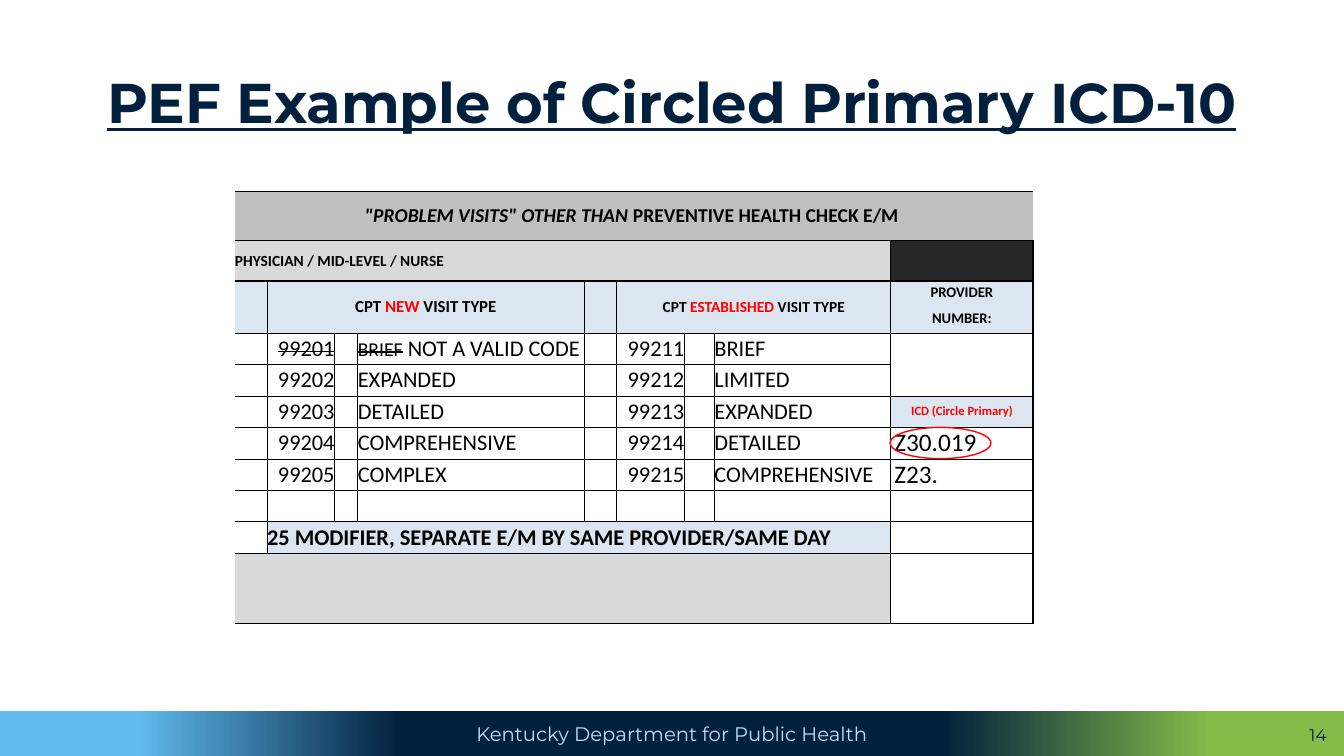
from dataclasses import dataclass

from lxml.etree import SubElement
from pptx import Presentation
from pptx.dml.color import RGBColor
from pptx.enum.shapes import MSO_SHAPE
from pptx.enum.text import MSO_ANCHOR, PP_ALIGN
from pptx.oxml.ns import qn
from pptx.util import Pt

RECTANGLE, OVAL = MSO_SHAPE.RECTANGLE, MSO_SHAPE.OVAL
MIDDLE = MSO_ANCHOR.MIDDLE
LEFT, CENTER, RIGHT = PP_ALIGN.LEFT, PP_ALIGN.CENTER, PP_ALIGN.RIGHT


@dataclass(frozen=True)
class Theme:
    heading_font: str = "Montserrat"
    table_font: str = "Calibri"
    navy: str = "01203D"
    sky: str = "62BCF0"
    green: str = "84BC49"
    pale_blue: str = "BCDEFB"
    black: str = "000000"
    red: str = "FF0000"
    banner: str = "BFBFBF"
    gray: str = "D9D9D9"
    dark: str = "262626"
    tint: str = "DCE6F1"
    title: float = 40
    footer: float = 14
    number: float = 12
    icd: float = 18
    code: float = 16
    banner_text: float = 14
    new_visit: float = 12
    label: float = 11
    provider: float = 10.5
    hint: float = 9
    empty: float = 8


THEME = Theme()
COLUMN_WIDTHS = [23, 48.2, 16.6, 162, 23, 48.2, 21.6, 126, 101.5]
ROW_HEIGHTS = [35.2, 28.9, 16.8, 20.4] + [22.5] * 7 + [50]
COLUMN_EDGES = [0, 0.5, 0.5, 0.5, 1, 0.5, 0.5, 0.5, 1, 1]
ROW_EDGES = [1, 0.5, 1] + [0.5] * 7 + [1, 1, 1]
NEW_VISITS = ["", "EXPANDED", "DETAILED", "COMPREHENSIVE", "COMPLEX"]
ESTABLISHED_VISITS = ["BRIEF", "LIMITED", "EXPANDED", "DETAILED", "COMPREHENSIVE"]


def add_span(para, text, *, size, font=THEME.table_font, color=THEME.black,
             bold=False, italic=False, underline=False, strike=False):
    span = para.add_run()
    span.text = text
    span.font.name = font
    span.font.size = Pt(size)
    span.font.color.rgb = RGBColor.from_string(color)
    span.font.bold, span.font.italic, span.font.underline = bold, italic, underline
    if strike:
        span.font._element.set("strike", "sngStrike")


class SlideBuilder:
    def __init__(self, page, theme):
        self.page = page
        self.theme = theme

    def shape(self, kind, *bounds):
        box = self.page.shapes.add_shape(kind, *map(Pt, bounds))
        box.shadow.inherit = False
        return box

    def fill_frame(self, frame, text, align, **style):
        frame.word_wrap = True
        frame.vertical_anchor = MIDDLE
        para = frame.paragraphs[0]
        para.alignment = align
        add_span(para, text, **style)
        return para

    def text(self, bounds, text, align, **style):
        box = self.page.shapes.add_textbox(*map(Pt, bounds))
        return self.fill_frame(box.text_frame, text, align, **style)

    def gradient_bar(self, bounds, stops, text, **style):
        bar = self.shape(RECTANGLE, *bounds)
        bar.line.fill.background()
        bar.fill.gradient()
        bar.fill.gradient_angle = 0
        stop_list = bar._element.spPr.find(qn("a:gradFill")).find(qn("a:gsLst"))
        stop_list.clear()
        for percent, color in stops:
            stop = SubElement(stop_list, qn("a:gs"), pos=str(percent * 1000))
            SubElement(stop, qn("a:srgbClr"), val=color)
        self.fill_frame(bar.text_frame, text, CENTER, **style)

    def ring(self, *bounds):
        ring = self.shape(OVAL, *bounds)
        ring.fill.background()
        ring.line.color.rgb = RGBColor.from_string(self.theme.red)
        ring.line.width = Pt(1)

    def table(self, left, top):
        frame = self.page.shapes.add_table(
            len(ROW_HEIGHTS), len(COLUMN_WIDTHS), Pt(left), Pt(top),
            Pt(sum(COLUMN_WIDTHS)), Pt(sum(ROW_HEIGHTS)))
        grid = frame.table
        grid.first_row = grid.horz_banding = False
        for column, width in zip(grid.columns, COLUMN_WIDTHS):
            column.width = Pt(width)
        for row, height in zip(grid.rows, ROW_HEIGHTS):
            row.height = Pt(height)
        return grid

    def border(self, cell, side, weight):
        line = SubElement(cell._tc.get_or_add_tcPr(), qn(f"a:ln{side}"), w=str(Pt(weight)))
        if weight:
            paint = SubElement(line, qn("a:solidFill"))
            SubElement(paint, qn("a:srgbClr"), val=self.theme.black)
        else:
            SubElement(line, qn("a:noFill"))

    def cell(self, grid, row, column, spans=(), fill=None, align=LEFT,
             rows=1, columns=1, indent=0, hidden=""):
        last_row, last_column = row + rows - 1, column + columns - 1
        for r in range(row, last_row + 1):
            for c in range(column, last_column + 1):
                part = grid.cell(r, c)
                weights = {
                    "L": COLUMN_EDGES[c] if c == column else 0,
                    "R": COLUMN_EDGES[c + 1] if c == last_column else 0,
                    "T": ROW_EDGES[r] if r == row else 0,
                    "B": ROW_EDGES[r + 1] if r == last_row else 0,
                }
                for side, weight in weights.items():
                    self.border(part, side, 0 if side in hidden else weight)
                if fill:
                    part.fill.solid()
                    part.fill.fore_color.rgb = RGBColor.from_string(fill)
                else:
                    part.fill.background()
                part.margin_left = Pt(indent)
                part.margin_right = part.margin_top = part.margin_bottom = 0
                part.vertical_anchor = MIDDLE
                if (r, c) != (row, column) or not spans:
                    SubElement(part.text_frame.paragraphs[0]._p, qn("a:endParaRPr"),
                               sz=str(int(self.theme.empty * 100)))
        origin = grid.cell(row, column)
        if rows * columns > 1:
            origin.merge(grid.cell(last_row, last_column))
        para = origin.text_frame.paragraphs[0]
        para.alignment = align
        for text, style in spans:
            add_span(para, text, **style)


def fill_headers(builder, grid):
    theme = builder.theme
    banner = dict(size=theme.banner_text, bold=True)
    builder.cell(grid, 0, 0, [('"PROBLEM VISITS" OTHER THAN ', dict(banner, italic=True)),
                              ("PREVENTIVE HEALTH CHECK E/M ", banner)],
                 theme.banner, CENTER, columns=9)
    builder.cell(grid, 1, 0, [("PHYSICIAN / MID-LEVEL / NURSE", dict(size=theme.label, bold=True))],
                 theme.gray, columns=8)
    builder.cell(grid, 1, 8, fill=theme.dark)
    for column, kind, size in [(0, "NEW", theme.new_visit), (4, "ESTABLISHED", theme.label)]:
        style = dict(size=size, bold=True)
        builder.cell(grid, 2, column, fill=theme.tint, rows=2)
        builder.cell(grid, 2, column + 1,
                     [("CPT ", style), (kind, dict(style, color=theme.red)), (" VISIT TYPE", style)],
                     theme.tint, CENTER, rows=2, columns=3)
    for row, word, hidden in [(2, "PROVIDER", "B"), (3, "NUMBER:", "T")]:
        builder.cell(grid, row, 8, [(word, dict(size=theme.provider, bold=True))],
                     theme.tint, CENTER, hidden=hidden)


def fill_visits(builder, grid):
    theme = builder.theme
    style = dict(size=theme.code)
    for start, first_code, visits in [(0, 99201, NEW_VISITS), (4, 99211, ESTABLISHED_VISITS)]:
        for index, visit in enumerate(visits):
            row = 4 + index
            code_style = dict(style, strike=not visit)
            spans = [(visit, style)] if visit else [
                ("BRIEF", dict(size=theme.banner_text, strike=True)), (" NOT A VALID CODE", style)]
            builder.cell(grid, row, start)
            builder.cell(grid, row, start + 1, [(str(first_code + index), code_style)], align=RIGHT)
            builder.cell(grid, row, start + 2)
            builder.cell(grid, row, start + 3, spans)
    for column in range(8):
        builder.cell(grid, 9, column)
        builder.cell(grid, 11, column, fill=theme.gray, hidden="LR" if column < 7 else "L")
    builder.cell(grid, 10, 0)
    builder.cell(grid, 10, 1, [("25 MODIFIER, SEPARATE E/M BY SAME PROVIDER/SAME DAY",
                                dict(style, bold=True))], theme.tint, columns=7)


def fill_diagnoses(builder, grid):
    theme = builder.theme
    builder.cell(grid, 4, 8, rows=2)
    builder.cell(grid, 6, 8, [("ICD (Circle Primary)", dict(size=theme.hint, color=theme.red, bold=True))],
                 theme.tint, CENTER)
    for row, code in [(7, "Z30.019"), (8, "Z23.")]:
        builder.cell(grid, row, 8, [(code, dict(size=theme.icd))], indent=2.5)
    for row in range(9, 12):
        builder.cell(grid, row, 8)


def main():
    deck = Presentation()
    deck.slide_width, deck.slide_height = Pt(960), Pt(540)
    builder = SlideBuilder(deck.slides.add_slide(deck.slide_layouts[6]), THEME)
    builder.gradient_bar(
        (0, 507.6, 960, 32.4),
        [(10, THEME.sky), (30, THEME.navy), (70, THEME.navy), (90, THEME.green)],
        "Kentucky Department for Public Health",
        size=THEME.footer, font=THEME.heading_font, color=THEME.pale_blue)
    heading = dict(font=THEME.heading_font, color=THEME.navy)
    title = builder.text((35.3, 28.8, 889.2, 92.9), "PEF Example of Circled Primary ICD-10",
                         CENTER, size=THEME.title, bold=True, underline=True, **heading)
    title.line_spacing = 0.9
    grid = builder.table(167.8, 136.6)
    fill_headers(builder, grid)
    fill_visits(builder, grid)
    fill_diagnoses(builder, grid)
    builder.text((900, 514.8, 54.7, 20.2), "14", RIGHT, size=THEME.number, **heading)
    builder.ring(635.8, 305.3, 72, 22.3)
    deck.save("out.pptx")


if __name__ == "__main__":
    main()
